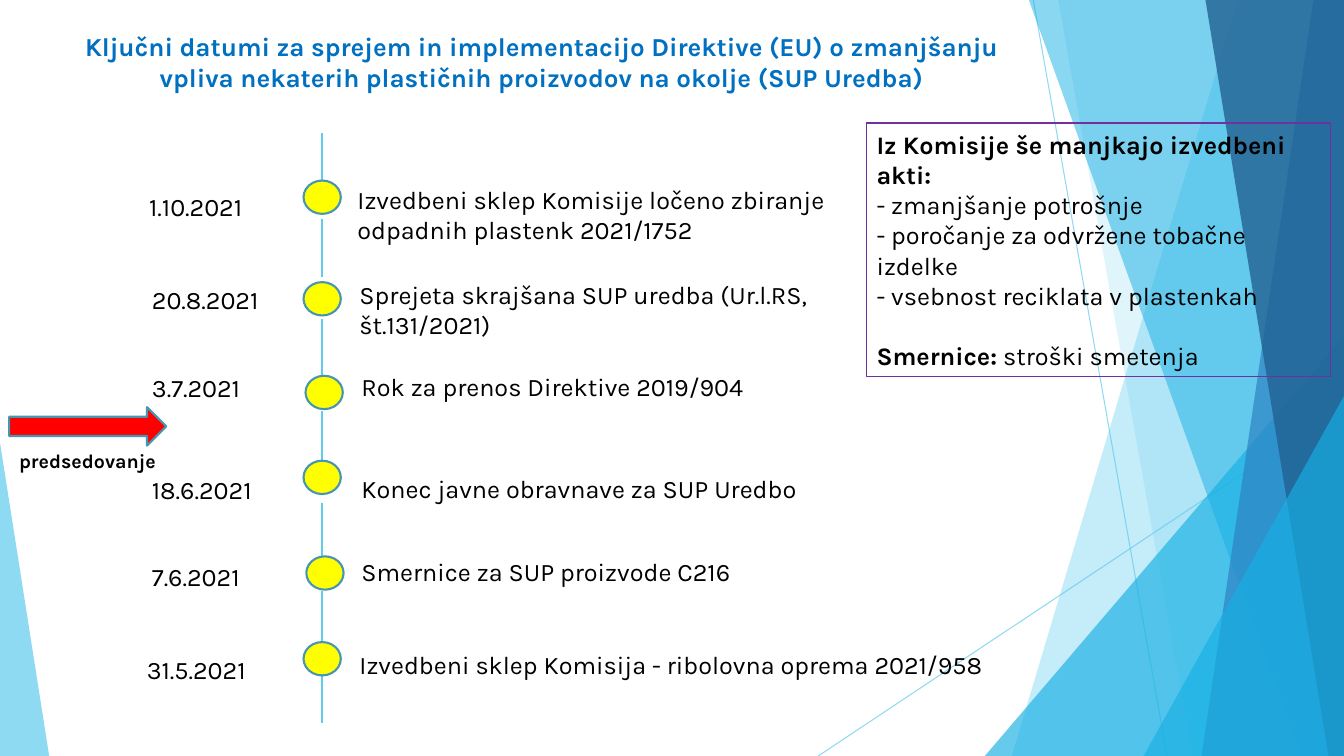
from lxml.etree import SubElement
from pptx import Presentation
from pptx.dml.color import RGBColor
from pptx.enum.shapes import MSO_CONNECTOR, MSO_SHAPE
from pptx.enum.text import MSO_ANCHOR, PP_ALIGN
from pptx.oxml.ns import qn
from pptx.util import Cm, Pt

SKY = RGBColor(0x5F, 0xCB, 0xEF)
CYAN = RGBColor(0x17, 0xB0, 0xE4)
BLUE = RGBColor(0x2E, 0x83, 0xC3)
NAVY = RGBColor(0x22, 0x62, 0x92)
TITLE_BLUE = RGBColor(0x00, 0x70, 0xC0)
TEAL = RGBColor(0x46, 0x96, 0xB1)
YELLOW = RGBColor(0xFF, 0xFF, 0x00)
RED = RGBColor(0xFF, 0x00, 0x00)
PURPLE = RGBColor(0x70, 0x30, 0xA0)
BLACK = RGBColor(0x00, 0x00, 0x00)

WIDTH, HEIGHT = 33.87, 19.05
DOT_W, DOT_H = 0.94, 0.84
SEGMENT = 1.47
AXIS_X = 4.66

EVENTS = [
    ("1.10.2021", 0.06, 1.35,
     "Izvedbeni sklep Komisije ločeno zbiranje odpadnih plastenk 2021/1752", 5.31, 1.17, 13.31, 4.20, 1.20),
    ("20.8.2021", 0.13, 3.69,
     "Sprejeta skrajšana SUP uredba (Ur.l.RS, št.131/2021)", 5.36, 3.56, 12.29, 4.20, 3.76),
    ("3.7.2021", 0.13, 5.90, "Rok za prenos Direktive 2019/904", 5.41, 5.87, 10.87, 4.25, 6.12),
    ("18.6.2021", 0.13, 8.49, "Konec javne obravnave za SUP Uredbo", 5.41, 8.44, 12.34, 4.20, 8.26),
    ("7.6.2021", 0.13, 10.67, "Smernice za SUP proizvode C216", 5.41, 10.54, 10.16, 4.27, 10.67),
    ("31.5.2021", 0, 13.01,
     "Izvedbeni sklep Komisija - ribolovna oprema 2021/958", 5.36, 12.88, 16.46, 4.20, 12.83),
]
SEGMENT_TOPS = [0, 2.16, 4.70, 7.01, 9.32, 11.53, 13.39]

PENDING_ACTS = [
    [("Iz Komisije še manjkajo izvedbeni akti:", True)],
    [("- zmanjšanje potrošnje", False)],
    [("- poročanje za odvržene tobačne izdelke", False)],
    [("- vsebnost reciklata v plastenkah", False)],
    [("Smernice:", True), (" stroški smetenja", False)],
]


def set_alpha(fmt, percent):
    for clr in fmt._xPr.iter(qn("a:srgbClr")):
        SubElement(clr, qn("a:alpha")).set("val", str(percent * 1000))


def style(sp, fill=None, line=None, weight=1.5, alpha=100):
    sp.shadow.inherit = False
    if fill is None:
        sp.fill.background()
    else:
        sp.fill.solid()
        sp.fill.fore_color.rgb = fill
        if alpha < 100:
            set_alpha(sp.fill, alpha)
    if line is None:
        sp.line.fill.background()
    else:
        sp.line.color.rgb = line
        sp.line.width = Pt(weight)


def add_preset(shapes, kind, x, y, w, h, **fmt):
    sp = shapes.add_shape(kind, Cm(x), Cm(y), Cm(w), Cm(h))
    style(sp, **fmt)
    return sp


def add_line(shapes, x1, y1, x2, y2, weight=1, alpha=100):
    ln = shapes.add_connector(MSO_CONNECTOR.STRAIGHT, Cm(x1), Cm(y1), Cm(x2), Cm(y2))
    ln.line.color.rgb = SKY
    ln.line.width = Pt(weight)
    spPr = ln._element.spPr
    if alpha < 100:
        for clr in spPr.iter(qn("a:srgbClr")):
            SubElement(clr, qn("a:alpha")).set("val", str(alpha * 1000))
    SubElement(spPr, qn("a:effectLst"))


def add_run(p, text, size=18, bold=False, color=BLACK):
    r = p.add_run()
    r.text = text
    r.font.name = "Karla"
    r.font.size = Pt(size)
    r.font.bold = bold
    r.font.color.rgb = color


def add_text(shapes, text, x, y, w, h=1.02, align=PP_ALIGN.LEFT, **fmt):
    tf = shapes.add_textbox(Cm(x), Cm(y), Cm(w), Cm(h)).text_frame
    tf.word_wrap = True
    p = tf.paragraphs[0]
    p.alignment = align
    add_run(p, text, **fmt)


def add_band(shapes, right, bottom, top_x, bottom_x, color, alpha):
    fb = shapes.build_freeform(Cm(top_x), 0, scale=1.0)
    fb.add_line_segments([(Cm(right), 0), (Cm(right), Cm(bottom)), (Cm(bottom_x), Cm(bottom))])
    style(fb.convert_to_shape(), fill=color, alpha=alpha)


def add_corner(shapes, x, y, w, h, apex, color, alpha):
    sp = add_preset(shapes, MSO_SHAPE.ISOSCELES_TRIANGLE, x, y, w, h, fill=color, alpha=alpha)
    sp.adjustments[0] = apex


def add_backdrop(shapes, w, h):
    add_line(shapes, w - 7.83, 0, w - 4.46, h, weight=0.75, alpha=70)
    add_line(shapes, w, 10.24, w - 13.25, h, weight=0.75, alpha=70)
    add_band(shapes, w, h, w - 2.68, w - 8.37, SKY, 36)
    add_band(shapes, w, h, w - 7.20, w - 3.82, SKY, 20)
    add_corner(shapes, w - 9.05, h - 10.59, 9.05, 10.59, 1, CYAN, 66)
    add_band(shapes, w, h, w - 7.94, w - 1.08, CYAN, 50)
    add_band(shapes, w, h, w - 0.77, w - 3.59, BLUE, 70)
    add_band(shapes, w, h, w - 3.49, w - 0.39, NAVY, 80)
    add_corner(shapes, w - 5.05, h - 9.07, 5.05, 9.07, 1, CYAN, 66)
    add_corner(shapes, 0, h - 7.90, 1.24, 7.90, 0, SKY, 70)


def add_timeline(shapes, x, y):
    for top in SEGMENT_TOPS:
        add_line(shapes, x + AXIS_X, y + top, x + AXIS_X, y + top + SEGMENT)
    for date, date_x, date_y, event, event_x, event_y, event_w, dot_x, dot_y in EVENTS:
        add_text(shapes, date, x + date_x, y + date_y, 3.96)
        add_text(shapes, event, x + event_x, y + event_y, event_w)
        add_preset(shapes, MSO_SHAPE.FLOWCHART_CONNECTOR, x + dot_x, y + dot_y, DOT_W, DOT_H,
                   fill=YELLOW, line=TEAL)


def add_presidency(shapes, x, y, w):
    add_preset(shapes, MSO_SHAPE.RIGHT_ARROW, x, y, w, 0.97, fill=RED, line=TEAL)
    add_text(shapes, "predsedovanje", x, y + 0.94, w, 0.86, size=14, bold=True)


def add_pending_box(shapes, x, y, w, h):
    sp = add_preset(shapes, MSO_SHAPE.RECTANGLE, x, y, w, h, line=PURPLE, weight=0.75)
    tf = sp.text_frame
    tf.word_wrap = True
    tf.vertical_anchor = MSO_ANCHOR.MIDDLE
    for i, runs in enumerate(PENDING_ACTS):
        p = tf.add_paragraph() if i else tf.paragraphs[0]
        p.alignment = PP_ALIGN.LEFT
        for text, bold in runs:
            add_run(p, text, bold=bold)
    p.space_before = Pt(21.6)


def main():
    prs = Presentation()
    prs.slide_width, prs.slide_height = Cm(WIDTH), Cm(HEIGHT)
    s = prs.slides.add_slide(prs.slide_layouts[6])
    add_backdrop(s.shapes, WIDTH, HEIGHT)
    add_text(s.shapes, "Ključni datumi za sprejem in implementacijo Direktive (EU) o zmanjšanju "
             "vpliva nekaterih plastičnih proizvodov na okolje (SUP Uredba)",
             1.70, 0.64, 23.88, 2.08, align=PP_ALIGN.CENTER, size=18.5, bold=True, color=TITLE_BLUE)
    add_timeline(s.shapes, 3.45, 3.35)
    add_presidency(s.shapes, 0.23, 10.26, 3.96)
    add_pending_box(s.shapes, 21.84, 3.10, 11.68, 6.40)
    prs.save("out.pptx")


if __name__ == "__main__":
    main()
